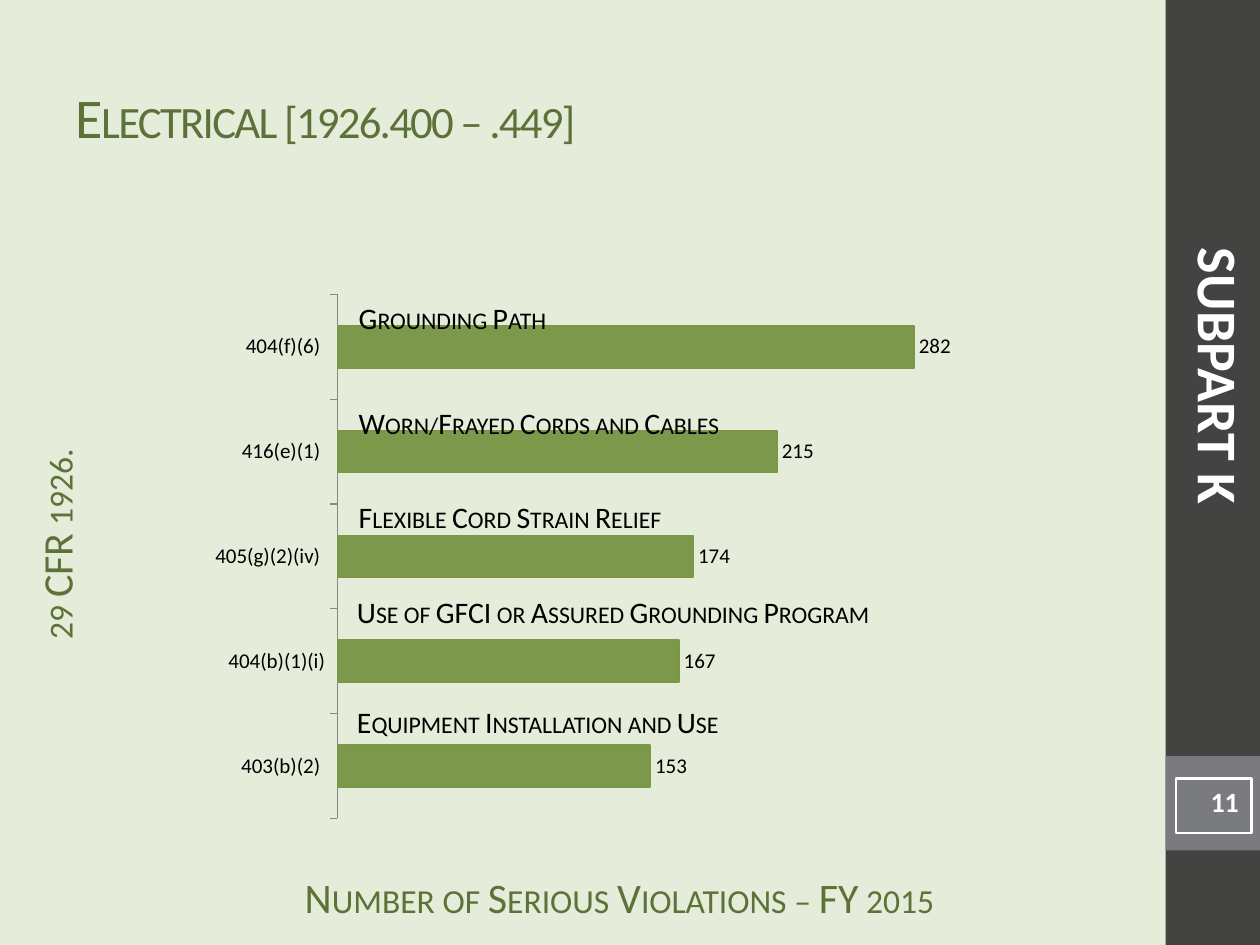
from lxml import etree
from pptx import Presentation
from pptx import util as u
from pptx.chart.data import CategoryChartData
from pptx.dml.color import RGBColor
from pptx.enum import chart as charts, shapes, text
from pptx.oxml import parse_xml
from pptx.oxml.ns import nsdecls

FONT = "Calibri"
BACKGROUND, DARK, GRAY, WHITE, BLACK = "E5ECD9", "434342", "797B7E", "FFFFFF", "000000"
GREEN, BAR, BAR_EDGE, AXIS = "5D7238", "7C984A", "7A9746", "868686"
LEFT, CENTER, RIGHT = text.PP_ALIGN.LEFT, text.PP_ALIGN.CENTER, text.PP_ALIGN.RIGHT
TOP, MIDDLE = text.MSO_ANCHOR.TOP, text.MSO_ANCHOR.MIDDLE
STANDARD_INSETS = (7.2, 3.6, 7.2, 3.6)
AXIS_TITLE_INSETS = (7.2, 0, 7.2, 3.6)


def color(hex_string):
    return RGBColor.from_string(hex_string)


def points(values):
    return [u.Pt(value) for value in values]


def format_font(font, size, hex_string=BLACK, bold=False):
    font.name, font.size, font.bold = FONT, u.Pt(size), bold
    font.color.rgb = color(hex_string)


def write(shape, content, size=17, hex_string=BLACK, bold=False, small_caps=False,
          spacing=None, align=LEFT, anchor=TOP, insets=STANDARD_INSETS, wrap=True):
    """Fill a shape with one formatted run; insets run left, top, right, bottom."""
    frame = shape.text_frame
    frame.word_wrap, frame.vertical_anchor = wrap, anchor
    frame.auto_size = text.MSO_AUTO_SIZE.NONE
    (frame.margin_left, frame.margin_top,
     frame.margin_right, frame.margin_bottom) = points(insets)
    paragraph = frame.paragraphs[0]
    paragraph.alignment = align
    run = paragraph.add_run()
    run.text = content
    format_font(run.font, size, hex_string, bold)
    properties = run._r.get_or_add_rPr()
    if small_caps:
        properties.set("cap", "small")
    if spacing is not None:
        properties.set("spc", str(int(spacing * 100)))


class SlideBuilder:
    def __init__(self, presentation):
        self.slide = presentation.slides.add_slide(presentation.slide_layouts[5])
        fill = self.slide.background.fill
        fill.solid()
        fill.fore_color.rgb = color(BACKGROUND)

    def title(self, content, box, **style):
        shape = self.slide.shapes.title
        shape.left, shape.top, shape.width, shape.height = points(box)
        write(shape, content, **style)

    def rectangle(self, box, fill=None, line=None):
        shape = self.slide.shapes.add_shape(shapes.MSO_SHAPE.RECTANGLE, *points(box))
        shape.shadow.inherit = False
        if fill:
            shape.fill.solid()
            shape.fill.fore_color.rgb = color(fill)
        else:
            shape.fill.background()
        if line:
            shape.line.color.rgb = color(line)
            shape.line.width = u.Pt(1.5)
        else:
            shape.line.fill.background()
        return shape

    def label(self, content, box, rotation=0, **style):
        shape = self.slide.shapes.add_textbox(*points(box))
        shape.rotation = rotation
        write(shape, content, **style)

    def bar_chart(self, box, values, maximum, plot_area):
        """Draw horizontal bars; plot_area gives x, y, w, h as shares of the chart."""
        data = CategoryChartData()
        data.categories = list(values)
        data.add_series("Series 1", list(values.values()))
        chart = self.slide.shapes.add_chart(
            charts.XL_CHART_TYPE.BAR_CLUSTERED, *points(box), data).chart
        chart.has_legend = chart.has_title = False
        format_font(chart.font, 10)

        category_axis, value_axis = chart.category_axis, chart.value_axis
        category_axis.major_tick_mark = charts.XL_TICK_MARK.OUTSIDE
        category_axis.format.line.color.rgb = color(AXIS)
        format_font(category_axis.tick_labels.font, 12)
        value_axis.minimum_scale, value_axis.maximum_scale = 0, maximum
        value_axis.has_major_gridlines = value_axis.visible = False

        plot = chart.plots[0]
        plot.gap_width, plot.vary_by_categories = 150, False
        series = plot.series[0]
        series.format.fill.solid()
        series.format.fill.fore_color.rgb = color(BAR)
        series.format.line.color.rgb = color(BAR_EDGE)
        series.format.line.width = u.Pt(1)
        labels = series.data_labels
        labels.show_value = True
        labels.position = charts.XL_LABEL_POSITION.OUTSIDE_END
        format_font(labels.font, 12)

        area = chart._chartSpace.chart.plotArea
        for layout in area.findall("{*}layout"):
            area.remove(layout)
        layout = parse_xml(f'<c:layout {nsdecls("c")}><c:manualLayout>'
                           '<c:layoutTarget val="inner"/><c:xMode val="edge"/>'
                           '<c:yMode val="edge"/></c:manualLayout></c:layout>')
        for name, share in zip("xywh", plot_area):
            tag = etree.QName(layout.nsmap["c"], name)
            etree.SubElement(layout[0], tag).set("val", str(share))
        area.insert(0, layout)


def main():
    presentation = Presentation()
    presentation.slide_width, presentation.slide_height = u.Pt(720), u.Pt(540)
    builder = SlideBuilder(presentation)

    builder.rectangle((666, 0, 54, 540), fill=DARK)
    builder.rectangle((666, 432, 54, 54), fill=GRAY)

    axis_title = dict(size=24, hex_string=GREEN, small_caps=True, align=CENTER,
                      insets=AXIS_TITLE_INSETS)
    builder.label("Number of Serious Violations – FY 2015", (150, 498, 408, 24), **axis_title)
    builder.label("29 CFR 1926.", (-112.5, 290, 302, 42), rotation=270, **axis_title)

    violations = {"403(b)(2) ": 153, "404(b)(1)(i)": 167, "405(g)(2)(iv) ": 174,
                  "416(e)(1) ": 215, "404(f)(6) ": 282}
    builder.bar_chart((114, 162, 438, 312), violations, maximum=300,
                      plot_area=(0.18, 0.02, 0.8, 0.96))

    builder.title("Electrical [1926.400 – .449]", (36, 21.6, 636, 90), size=32,
                  hex_string=GREEN, small_caps=True, spacing=-1, anchor=MIDDLE)
    page_number = builder.rectangle((672, 445, 43, 31), line=WHITE)
    write(page_number, "11", size=16, hex_string=WHITE, bold=True, align=RIGHT)

    bar_captions = [("Grounding Path", 205, 167.8),
                    ("Worn/Frayed Cords and Cables", 205, 227.5),
                    ("Flexible Cord Strain Relief", 205, 281.5),
                    ("Use of GFCI or Assured Grounding Program", 204, 339),
                    ("Equipment Installation and Use", 204, 402)]
    for caption, left, top in bar_captions:
        builder.label(caption, (left, top, 324, 21), small_caps=True, wrap=False,
                      insets=(0, 3.6 if left == 205 else 0, 0, 0))

    builder.label("SUBPART K", (481.5, 192, 431, 46), rotation=90, size=32,
                  hex_string=WHITE, bold=True, align=CENTER)
    presentation.save("out.pptx")


if __name__ == "__main__":
    main()
